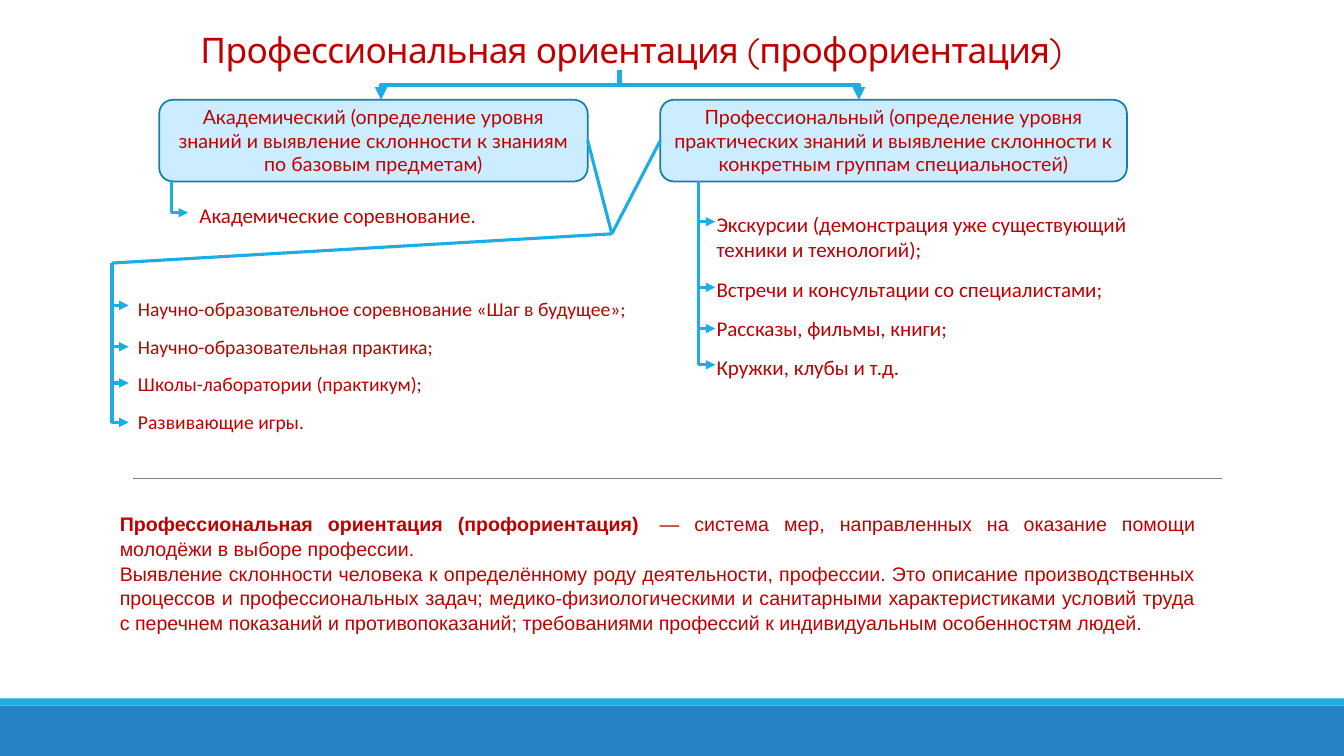
"""Build the career guidance slide: title, two branches with their lists, and a definition."""
from lxml import etree
from pptx import Presentation
from pptx.dml.color import RGBColor
from pptx.enum.shapes import MSO_CONNECTOR, MSO_SHAPE
from pptx.enum.text import MSO_ANCHOR, PP_ALIGN
from pptx.oxml.ns import qn
from pptx.util import Inches, Pt

STRAIGHT, ELBOW = MSO_CONNECTOR.STRAIGHT, MSO_CONNECTOR.ELBOW
RECT, ROUNDED = MSO_SHAPE.RECTANGLE, MSO_SHAPE.ROUNDED_RECTANGLE
TOP, MIDDLE = MSO_ANCHOR.TOP, MSO_ANCHOR.MIDDLE
LEFT, CENTER, JUSTIFY = PP_ALIGN.LEFT, PP_ALIGN.CENTER, PP_ALIGN.JUSTIFY
LEFT_SIDE, RIGHT_SIDE = 1, 3

CELL = Inches(0.1)
COLS, ROWS = 133.33, 75

THEME = {
    "text": "C00000", "accent": "1CADE4", "footer": "2683C6",
    "box": "CCECFF", "box_line": "1580A9", "divider": "808080",
    "title": {"name": "Quicksand", "size": Pt(25.2)},
    "branch": {"name": "Lato", "size": Pt(14)},
    "list": {"name": "Calibri", "size": Pt(15)},
    "small_list": {"name": "Calibri", "size": Pt(14)},
    "definition": {"name": "Arial", "size": Pt(14)},
    "trunk": 3, "branch_line": 2.25, "box_edge": 1.25, "hairline": 0.5,
}

TITLE = "Профессиональная ориентация (профориентация)"
ACADEMIC = "Академический (определение уровня знаний и выявление склонности к знаниям по базовым предметам)"
PROFESSIONAL = ("Профессиональный (определение уровня практических знаний и выявление склонности "
                "к конкретным группам специальностей)")
DEFINITION = [
    [(TITLE + " ", True),
     ("\u00a0— система мер, направленных на оказание помощи молодёжи в выборе профессии.", False)],
    [("Выявление склонности человека к определённому роду деятельности, профессии. "
      "Это описание производственных процессов и профессиональных задач; "
      "медико-физиологическими и санитарными характеристиками условий труда с перечнем показаний "
      "и противопоказаний; требованиями профессий к индивидуальным особенностям людей.", False)],
]
LISTS = [
    ((18.8, 19.6, 42.9, 4), "list", ["Академические соревнование."]),
    ((70.1, 20.5, 42.9, 18.9), "list", [
        "Экскурсии (демонстрация уже существующий техники и технологий);",
        "Встречи и консультации со специалистами;",
        "Рассказы, фильмы, книги;",
        "Кружки, клубы и т.д."]),
    ((12.7, 29, 50.8, 14.6), "small_list", [
        "Научно-образовательное соревнование «Шаг в будущее»;",
        "Научно-образовательная практика;",
        "Школы-лаборатории (практикум);",
        "Развивающие игры."]),
]
BOX_TOP, BOX_HEIGHT = 9.9, 8.1
ACADEMIC_BOX = (15.8, BOX_TOP, 42.5, BOX_HEIGHT)
PROFESSIONAL_BOX = (65.5, BOX_TOP, 46.3, BOX_HEIGHT)
TRUNK_START, TRUNK_ENDS = (61.45, 6.9), (37.8, 85.2)
JUNCTION, SHARED_TOP = (60.7, 23.2), (11.1, 26.1)
TWIG = 1.65
STEMS = [
    (17, 17.9, [21.1]),
    (69.3, 18, [22, 28.5, 32.6, 36.2]),
    (11.1, 26.1, [30.3, 34.4, 38, 41.9]),
]


def grid(*cells):
    return [round(c * CELL) for c in cells]


def rgb(key):
    return RGBColor.from_string(THEME[key])


def write(shape, paragraphs, style, align=LEFT, anchor=TOP, **spacing):
    tf = shape.text_frame
    tf.word_wrap = True
    tf.vertical_anchor = anchor
    for i, runs in enumerate(paragraphs):
        p = tf.add_paragraph() if i else tf.paragraphs[0]
        for name, value in {"alignment": align, **spacing}.items():
            setattr(p, name, value)
        for text, bold in runs:
            r = p.add_run()
            r.text = text
            for name, value in {**THEME[style], "bold": bold}.items():
                setattr(r.font, name, value)
            r.font.color.rgb = rgb("text")
    return tf


def block(s, kind, place, fill, edge=None):
    sp = s.shapes.add_shape(kind, *grid(*place))
    sp.shadow.inherit = False
    sp.fill.solid()
    sp.fill.fore_color.rgb = rgb(fill)
    if edge:
        sp.line.color.rgb = rgb(edge)
        sp.line.width = Pt(THEME["box_edge"])
    else:
        sp.line.fill.background()
    return sp


def line(s, start, end, color="accent", width="branch_line", kind=STRAIGHT):
    cn = s.shapes.add_connector(kind, *grid(*start, *end))
    cn.line.color.rgb = rgb(color)
    cn.line.width = Pt(THEME[width])
    etree.SubElement(cn._element.spPr, qn("a:effectLst"))
    return cn


def elbow(s, start, end, preset, width="branch_line"):
    """Draw an arrow that leaves downwards, as a quarter-turned elbow about its centre."""
    (x1, y1), (x2, y2) = start, end
    cx, cy = (x1 + x2) / 2, (y1 + y2) / 2
    half_w, half_h = (y2 - y1) / 2, abs(x2 - x1) / 2
    flip = 1 if x2 > x1 else -1
    cn = line(s, (cx + flip * half_w, cy - half_h), (cx - flip * half_w, cy + half_h),
              width=width, kind=ELBOW)
    sp_pr = cn._element.spPr
    sp_pr.find(qn("a:xfrm")).set("rot", str((270 if x2 > x1 else 90) * 60000))
    sp_pr.find(qn("a:prstGeom")).set("prst", preset)
    etree.SubElement(sp_pr.find(qn("a:ln")), qn("a:tailEnd"), type="triangle")


def main():
    prs = Presentation()
    prs.slide_width, prs.slide_height = grid(COLS, ROWS)
    s = prs.slides.add_slide(prs.slide_layouts[6])

    block(s, RECT, (0, 70, COLS, 5), "footer")
    block(s, RECT, (0, 69.3, COLS, 0.7), "accent")
    line(s, (13.2, 47.5), (121.2, 47.5), "divider", "hairline")

    tf = write(s.shapes.add_textbox(*grid(18.9, -0.8, 92.9, 9.4)), [[(TITLE, False)]],
               "title", anchor=MIDDLE, line_spacing=1.5)
    tf.paragraphs[0].runs[0].font._element.set("spc", "-50")
    write(s.shapes.add_textbox(*grid(10.9, 50.2, 108.7, 12.8)), DEFINITION,
          "definition", JUSTIFY, line_spacing=1.05)

    boxes = []
    for place, text in ((ACADEMIC_BOX, ACADEMIC), (PROFESSIONAL_BOX, PROFESSIONAL)):
        sp = block(s, ROUNDED, place, "box", "box_line")
        write(sp, [[(text, False)]], "branch", CENTER, MIDDLE)
        boxes.append(sp)

    for place, style, items in LISTS:
        write(s.shapes.add_textbox(*grid(*place)), [[(item, False)] for item in items],
              style, space_before=Pt(10))

    for x in TRUNK_ENDS:
        elbow(s, TRUNK_START, (x, BOX_TOP), "bentConnector3", "trunk")
    for x, top, ends in STEMS:
        for start, end in zip([top] + ends, ends):
            elbow(s, (x, start), (x + TWIG, end), "bentConnector2")
    line(s, SHARED_TOP, JUNCTION)
    for sp, side in zip(boxes, (RIGHT_SIDE, LEFT_SIDE)):
        line(s, JUNCTION, JUNCTION).begin_connect(sp, side)

    prs.save("out.pptx")


if __name__ == "__main__":
    main()
